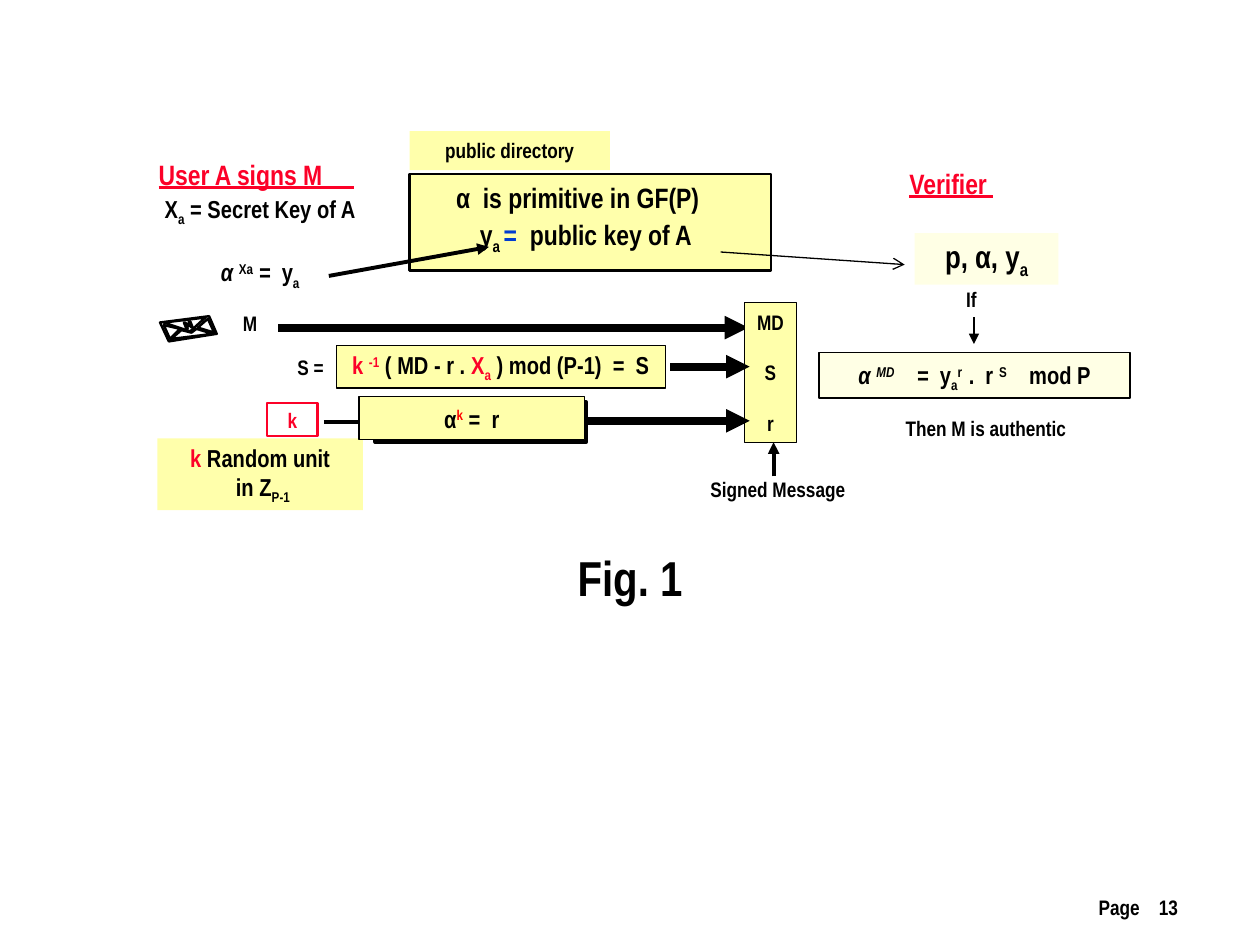
"""Build a slide that shows how a message is signed and verified."""
import pptx
import pptx.util
import pptx.dml.color
import pptx.enum.shapes
import pptx.enum.text
import pptx.oxml
import pptx.oxml.ns

Inches = pptx.util.Inches
Pt = pptx.util.Pt

FONT = "Arial Narrow"
BLACK, RED, BLUE = "000000", "FC0128", "023DD0"
YELLOW, CREAM, WHITE = "FFFFAB", "FFFFE5", "FFFFFF"
BASELINES = {"^": "30000", "_": "-25000"}

PANELS = [
    (6.5, 2.8, 2.47, 0.36, CREAM, BLACK, 0.75),
    (3.25, 1.38, 2.87, 0.77, YELLOW, BLACK, 1.5),
    (2.12, 3.2, 0.4, 0.26, WHITE, RED, 1.5),
    (2.67, 2.74, 2.61, 0.34, YELLOW, BLACK, 0.75),
    (1.25, 3.48, 1.63, 0.57, YELLOW, None, 0),
    (2.98, 3.19, 1.67, 0.32, "99FFCC", BLACK, 2.25),
    (2.85, 3.15, 1.79, 0.34, YELLOW, BLACK, 0.75),
    (5.91, 2.4, 0.41, 1.11, YELLOW, BLACK, 0.75),
    (3.25, 1.04, 1.59, 0.31, YELLOW, None, 0),
    (7.26, 1.85, 1.14, 0.41, CREAM, None, 0),
]

LABELS = [
    (5.05, 3.73, 2.21, 0.31, 12, BLACK, 0, [[(" Signed Message",)]]),
    (1.83, 2.41, 0.31, 0.31, 12, BLACK, 0, [[("M",)]]),
    (2.67, 2.74, 2.61, 0.34, 14, BLACK, 0, [[
        ("k ", "", RED), ("-1", "^", RED), (" ( MD - r . ",), ("X", "", RED),
        ("a", "_", RED), (" ) mod (P-1)  =  S",)]]),
    (7.08, 3.24, 1.49, 0.31, 12, BLACK, 0, [[("Then M is authentic",)]]),
    (3.5, 1.38, 2.17, 0.37, 16, BLACK, 0, [[("α  is primitive in GF(P)",)]]),
    (1.03, 1.52, 2.07, 0.81, 14, BLACK, 17, [
        [("X",), ("a", "_"), (" = Secret Key of A",)],
        [("α ", "i"), ("Xa", "^"), (" =  ", "i"), ("y",), ("a", "_")]]),
    (2.17, 3.18, 0.3, 0.31, 12, RED, 0, [[("k",)]]),
    (0.83, 1.2, 2.41, 0.37, 16, RED, 0, [[("User A signs M     ", "u")]]),
    (6.89, 1.27, 1.32, 0.37, 16, RED, 0, [[("Verifier ", "u")]]),
    (3.36, 1.69, 2.58, 0.37, 16, BLACK, 0, [[
        ("y",), ("a ", "_"), ("= ", "", BLUE), (" public key of A",)]]),
    (1.25, 3.48, 1.63, 0.57, 14, BLACK, 0, [
        [("k", "", RED), (" Random unit",)], [(" in Z",), ("P-1", "_")]]),
    (2.85, 3.15, 1.79, 0.34, 14, BLACK, 0, [[
        ("α",), ("k", "^", "FF0000"), (" =  r",)]]),
    (5.91, 2.4, 0.41, 1.11, 12, BLACK, 14.5, [[("MD",)], [("S",)], [("r",)]]),
    (6.66, 2.82, 2.15, 0.34, 14, BLACK, 0, [[
        ("α ", "i"), ("MD", "i^"), ("    =  ", "i"), ("y",), ("a", "_"),
        ("r  ", "^"), (".  r ",), ("S", "^"), ("    mod P",)]]),
    (7.57, 2.22, 0.28, 0.31, 12, BLACK, 0, [[("If",)]]),
    (3.25, 1.04, 1.59, 0.31, 12, BLACK, 0, [[("public directory",)]]),
    (7.26, 1.85, 1.14, 0.41, 18, BLACK, 0, [[("p, α, y",), ("a", "_")]]),
    (4.48, 4.29, 1.04, 0.57, 28, BLACK, 0, [[("Fig. 1",)]]),
    (2.26, 2.76, 0.41, 0.31, 12, BLACK, 0, [[("S =",)]]),
]
PAGE_NUMBER = (6.87, 7.05, 2.48, 0.3, 12, BLACK, 0, [[("Page    13",)]])

BACK_ARROWS = [
    (2.21, 2.6, 5.94, 2.6, 4.5, "triangle"),
    (2.57, 3.35, 2.98, 3.35, 2.25, "triangle"),
]
FRONT_ARROWS = [
    (6.14, 3.78, 6.14, 3.51, 2.25, "triangle"),
    (2.61, 2.19, 3.88, 1.96, 2.25, "triangle"),
    (7.73, 2.52, 7.73, 2.73, 1.5, "triangle"),
    (5.72, 2, 7.18, 2.1, 0.75, "arrow"),
    (5.32, 2.91, 5.95, 2.91, 4.5, "triangle"),
    (4.65, 3.34, 5.95, 3.34, 4.5, "triangle"),
]

ENVELOPE = [
    [(127, 256), (166, 251), (172, 265), (134, 271)],
    [(130, 256), (151, 263), (163, 252)],
    [(130, 258), (135, 269), (143, 261)],
    [(165, 253), (157, 260), (170, 264)],
    [(144, 262), (136, 269), (169, 265), (156, 261), (152, 264)],
    [(146, 256), (148, 261), (149, 261), (147, 256), (150, 259),
     (150, 255), (152, 260), (153, 260), (151, 255), (150, 259), (147, 256)],
]


def color(code):
    return pptx.dml.color.RGBColor.from_string(code)


def add_panel(page, left, top, width, height, fill, line, weight):
    panel = page.shapes.add_shape(
        pptx.enum.shapes.MSO_SHAPE.RECTANGLE,
        Inches(left), Inches(top), Inches(width), Inches(height))
    panel.shadow.inherit = False
    panel.fill.solid()
    panel.fill.fore_color.rgb = color(fill)
    if line:
        panel.line.color.rgb = color(line)
        panel.line.width = Pt(weight)
    else:
        panel.line.fill.background()


def add_span(para, text, marks="", code=None):
    span = para.add_run()
    span.text = text
    if code:
        span.font.color.rgb = color(code)
    if "i" in marks:
        span.font.italic = True
    if "u" in marks:
        span.font.underline = True
    for mark, baseline in BASELINES.items():
        if mark in marks:
            span.font._element.set("baseline", baseline)


def add_label(page, left, top, width, height, size, code, gap, paragraphs,
              alignment=pptx.enum.text.PP_ALIGN.CENTER):
    box = page.shapes.add_textbox(Inches(left), Inches(top), Inches(width), Inches(height))
    frame = box.text_frame
    frame.word_wrap = True
    frame.margin_left = frame.margin_right = 0
    frame.vertical_anchor = pptx.enum.text.MSO_ANCHOR.MIDDLE
    for index, spans in enumerate(paragraphs):
        para = frame.add_paragraph() if index else frame.paragraphs[0]
        para.alignment = alignment
        para.space_before = Pt(gap if index else 0)
        para.font.name = FONT
        para.font.size = Pt(size)
        para.font.bold = True
        para.font.color.rgb = color(code)
        for span in spans:
            add_span(para, *span)


def add_arrow(page, x1, y1, x2, y2, weight, head):
    arrow = page.shapes.add_connector(
        pptx.enum.shapes.MSO_CONNECTOR.STRAIGHT,
        Inches(x1), Inches(y1), Inches(x2), Inches(y2))
    arrow.line.color.rgb = color(BLACK)
    arrow.line.width = Pt(weight)
    tail = pptx.oxml.ns.qn("a:tailEnd")
    line = arrow.line._get_or_add_ln()
    line.append(line.makeelement(tail, {"type": head}))
    properties = arrow._element.spPr
    properties.append(properties.makeelement(pptx.oxml.ns.qn("a:effectLst"), {}))


def add_envelope(page):
    group = page.shapes.add_group_shape()
    for start, *rest in ENVELOPE:
        builder = group.shapes.build_freeform(*start, scale=Inches(0.01))
        builder.add_line_segments(rest, close=True)
        outline = builder.convert_to_shape()
        outline.shadow.inherit = False
        outline.fill.background()
        outline.line.color.rgb = color(BLACK)
        outline.line.width = Pt(1.38)


def main():
    deck = pptx.Presentation()
    deck.slide_width, deck.slide_height = Inches(10), Inches(7.5)
    page = deck.slides.add_slide(deck.slide_layouts[6])
    for arrow in BACK_ARROWS:
        add_arrow(page, *arrow)
    for panel in PANELS:
        add_panel(page, *panel)
    for label in LABELS:
        add_label(page, *label)
    add_label(page, *PAGE_NUMBER, alignment=pptx.enum.text.PP_ALIGN.RIGHT)
    for arrow in FRONT_ARROWS:
        add_arrow(page, *arrow)
    add_envelope(page)
    deck.save("out.pptx")


if __name__ == "__main__":
    main()
